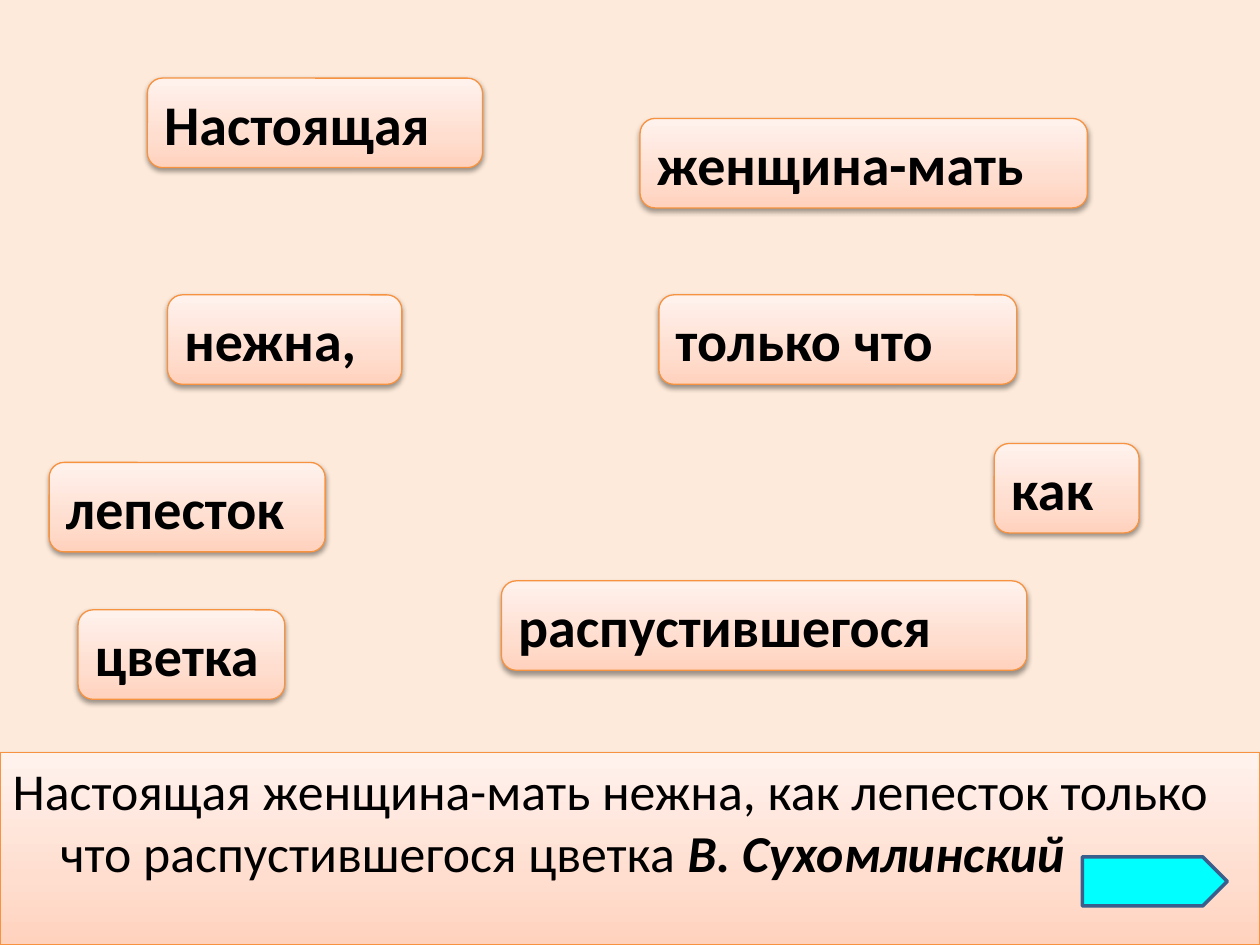
from copy import deepcopy

from lxml.etree import SubElement
from pptx import Presentation
from pptx.dml.color import RGBColor
from pptx.enum.shapes import MSO_SHAPE
from pptx.enum.text import MSO_ANCHOR, MSO_AUTO_SIZE, PP_ALIGN
from pptx.oxml.ns import qn
from pptx.util import Inches, Pt

COLORS = {
    "background": "FDEADA", "peach": "FFD2BD", "blush": "FFDED0",
    "cream": "FFF2ED", "orange": "F69240", "text": "000000",
    "cyan": "00FFFF", "navy": "3A5F8C",
}


def rgb(name):
    return RGBColor.from_string(COLORS[name])


class Board:
    font = "Calibri"
    stops = [(0, "peach"), (0.35, "blush"), (1, "cream")]

    def __init__(self, slide):
        self.slide = slide
        slide.background.fill.solid()
        slide.background.fill.fore_color.rgb = rgb("background")

    def outline(self, shape, color, width):
        shape.line.color.rgb = rgb(color)
        shape.line.width = Pt(width)

    def style_panel(self, shape):
        shape.fill.gradient()
        shape.fill.gradient_angle = 90
        stop_list = shape._element.spPr.find(qn("a:gradFill")).find(qn("a:gsLst"))
        stop_list.append(deepcopy(stop_list[0]))
        for stop, (position, color) in zip(shape.fill.gradient_stops, self.stops):
            stop.position = position
            stop.color.rgb = rgb(color)
        self.outline(shape, "orange", 0.75)
        shape.shadow.inherit = False
        effects = shape._element.spPr.find(qn("a:effectLst"))
        shadow = SubElement(effects, qn("a:outerShdw"), blurRad=str(Pt(3.1)),
                            dist=str(Pt(1.6)), dir="5400000", rotWithShape="0")
        shade = SubElement(shadow, qn("a:srgbClr"), val=COLORS["text"])
        SubElement(shade, qn("a:alpha"), val="38000")

    def style_run(self, run, size, bold=False, italic=False):
        run.font.name = self.font
        run.font.size = Pt(size)
        run.font.bold = bold
        run.font.italic = italic
        run.font.color.rgb = rgb("text")

    def add_quote(self, sentence, author):
        quote = self.slide.placeholders[1]
        quote.left, quote.top, quote.width, quote.height = map(
            Inches, (0, 5.97, 10, 1.53))
        self.style_panel(quote)
        frame = quote.text_frame
        frame.auto_size = MSO_AUTO_SIZE.NONE
        frame.vertical_anchor = MSO_ANCHOR.TOP
        frame.text = sentence
        paragraph = frame.paragraphs[0]
        paragraph.alignment = PP_ALIGN.LEFT
        paragraph.space_before = Pt(6)
        properties = paragraph._p.get_or_add_pPr()
        properties.set("marL", str(Inches(0.38)))
        properties.set("indent", str(Inches(-0.38)))
        SubElement(properties, qn("a:buNone"))
        self.style_run(paragraph.runs[0], 29.6)
        signature = paragraph.add_run()
        signature.text = author
        self.style_run(signature, 29.6, bold=True, italic=True)

    def add_word(self, word, left, top, width):
        card = self.slide.shapes.add_shape(
            MSO_SHAPE.ROUNDED_RECTANGLE,
            *map(Inches, (left, top, width, 0.71)))
        self.style_panel(card)
        frame = card.text_frame
        frame.word_wrap = True
        frame.auto_size = MSO_AUTO_SIZE.SHAPE_TO_FIT_TEXT
        frame.text = word
        frame.paragraphs[0].alignment = PP_ALIGN.LEFT
        self.style_run(frame.paragraphs[0].runs[0], 32, bold=True)

    def add_next_arrow(self, left, top, width, height):
        arrow = self.slide.shapes.add_shape(
            MSO_SHAPE.PENTAGON, *map(Inches, (left, top, width, height)))
        arrow.shadow.inherit = False
        arrow.fill.solid()
        arrow.fill.fore_color.rgb = rgb("cyan")
        self.outline(arrow, "navy", 2)


def main():
    deck = Presentation()
    deck.slide_width, deck.slide_height = Inches(10), Inches(7.5)
    slide = deck.slides.add_slide(deck.slide_layouts[1])
    title = slide.shapes.title._element
    title.getparent().remove(title)

    board = Board(slide)
    board.add_quote(
        "Настоящая женщина-мать нежна, как лепесток только что "
        "распустившегося цветка", " В. Сухомлинский")
    words = [
        ("Настоящая", 1.17, 0.62, 2.66),
        ("женщина-мать", 5.08, 0.94, 3.55),
        ("нежна,", 1.33, 2.34, 1.86),
        ("как", 7.89, 3.52, 1.15),
        ("лепесток", 0.39, 3.67, 2.19),
        ("только что", 5.23, 2.34, 2.84),
        ("распустившегося", 3.98, 4.61, 4.17),
        ("цветка", 0.62, 4.84, 1.64),
    ]
    for word in words:
        board.add_word(*word)
    board.add_next_arrow(8.59, 6.8, 1.15, 0.39)
    deck.save("out.pptx")


if __name__ == "__main__":
    main()
